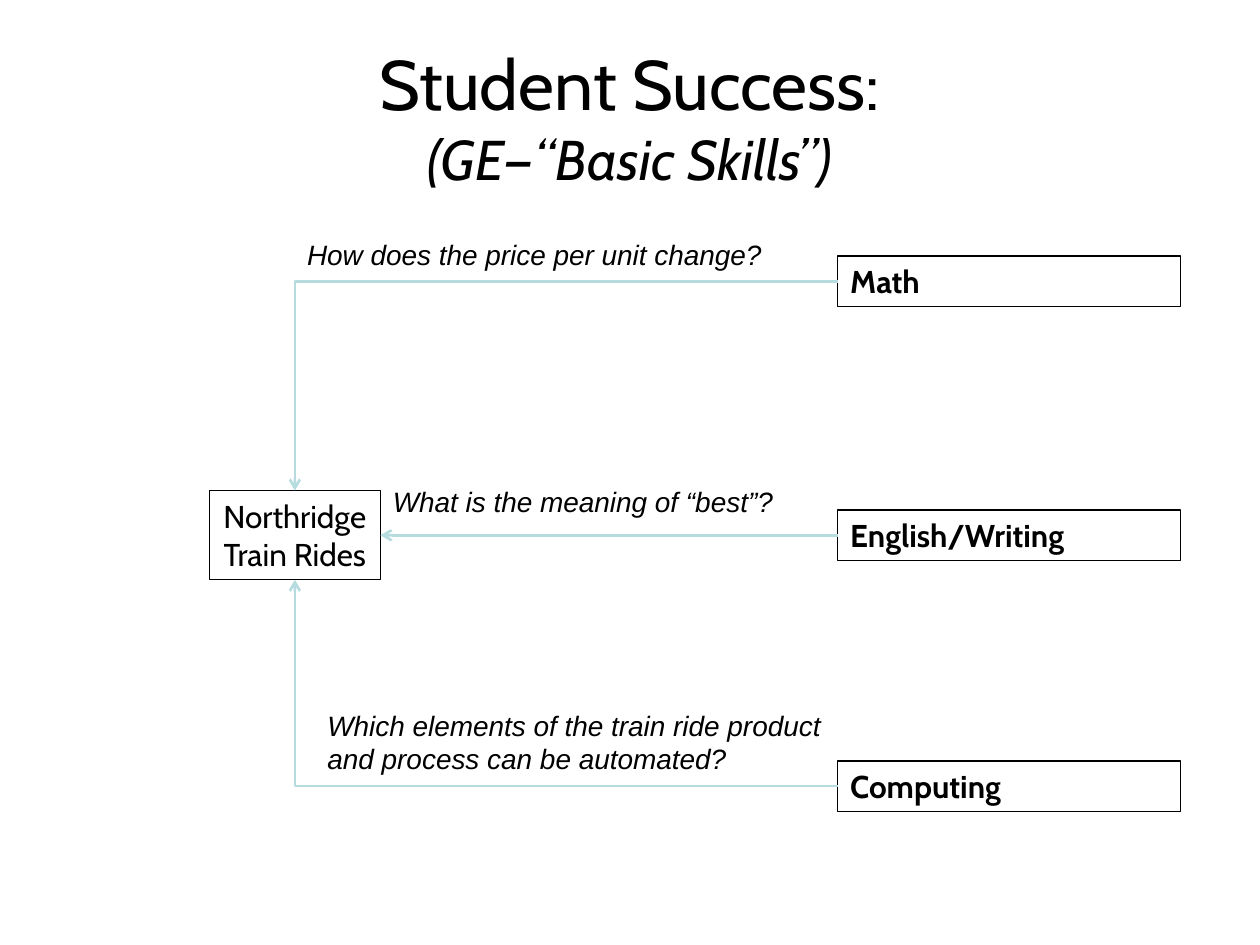
from lxml import etree
from pptx import Presentation
from pptx import util as u
from pptx.dml.color import RGBColor
from pptx.enum import shapes, text
from pptx.oxml import ns

BLACK = RGBColor(0x00, 0x00, 0x00)
WHITE = RGBColor(0xFF, 0xFF, 0xFF)
PALE_TEAL = RGBColor(0xB6, 0xDC, 0xDF)
TOP, LEFT, BOTTOM, RIGHT = range(4)  # connection sites of a rectangle

SUBJECT_LEFT, SUBJECT_WIDTH, SUBJECT_HEIGHT = 16.89, 6.91, 1.02


class SkillsSlide:
    heading_font = "Cabin"
    question_font = "Arial"

    def __init__(self, presentation):
        self.slide = presentation.slides.add_slide(presentation.slide_layouts[5])
        self.slide.background.fill.solid()
        self.slide.background.fill.fore_color.rgb = WHITE

    def add_run(self, paragraph, words, font, size, bold=False, italic=False):
        run = paragraph.add_run()
        run.text = words
        run.font.name = font
        run.font.size = u.Pt(size)
        run.font.bold = bold
        run.font.italic = italic
        run.font.color.rgb = BLACK

    def title(self, heading, subheading):
        shape = self.slide.shapes.title
        shape.left, shape.top = u.Cm(1.27), u.Cm(0.76)
        shape.width, shape.height = u.Cm(22.86), u.Cm(3.18)
        frame = shape.text_frame
        frame.auto_size = text.MSO_AUTO_SIZE.NONE
        frame.vertical_anchor = text.MSO_ANCHOR.MIDDLE
        paragraph = frame.paragraphs[0]
        paragraph.alignment = text.PP_ALIGN.CENTER
        self.add_run(paragraph, heading, self.heading_font, 40)
        paragraph.add_line_break()
        self.add_run(paragraph, subheading, self.heading_font, 32, italic=True)

    def box(self, lines, left, top, width, height, centred=False, bold=False):
        shape = self.slide.shapes.add_shape(
            shapes.MSO_SHAPE.RECTANGLE,
            u.Cm(left), u.Cm(top), u.Cm(width), u.Cm(height))
        shape.shadow.inherit = False
        shape.fill.background()
        shape.line.color.rgb = BLACK
        shape.line.width = u.Pt(0.75)
        frame = shape.text_frame
        frame.word_wrap = not centred
        frame.vertical_anchor = text.MSO_ANCHOR.MIDDLE if centred else text.MSO_ANCHOR.TOP
        for index, line in enumerate(lines):
            paragraph = frame.add_paragraph() if index else frame.paragraphs[0]
            paragraph.alignment = text.PP_ALIGN.CENTER if centred else text.PP_ALIGN.LEFT
            self.add_run(paragraph, line, self.heading_font, 18, bold=bold)
        return shape

    def question(self, words, left, top, width, height):
        shape = self.slide.shapes.add_textbox(
            u.Cm(left), u.Cm(top), u.Cm(width), u.Cm(height))
        shape.text_frame.word_wrap = True
        self.add_run(shape.text_frame.paragraphs[0], words,
                     self.question_font, 16, italic=True)

    def arrow(self, source, target, site):
        """Join the left of source to a site of target, with one corner unless level."""
        straight = site == RIGHT
        kind = shapes.MSO_CONNECTOR.STRAIGHT if straight else shapes.MSO_CONNECTOR.ELBOW
        connector = self.slide.shapes.add_connector(kind, 0, 0, 0, 0)
        connector.begin_connect(source, LEFT)
        connector.end_connect(target, site)
        connector.line.color.rgb = PALE_TEAL
        connector.line.width = u.Pt(1.5)
        properties = connector._element.spPr
        if not straight:
            properties.find(ns.qn("a:prstGeom")).set("prst", "bentConnector2")
        etree.SubElement(properties.find(ns.qn("a:ln")), ns.qn("a:tailEnd"), type="arrow")
        etree.SubElement(properties, ns.qn("a:effectLst"))


def main():
    presentation = Presentation()
    presentation.slide_width, presentation.slide_height = u.Cm(25.4), u.Cm(19.05)
    skills = SkillsSlide(presentation)
    skills.title("Student Success:", "(GE—“Basic Skills”)")
    project = skills.box(["Northridge", "Train Rides"], 4.22, 9.89, 3.45, 1.8, centred=True)

    # subject, top of its box, site on the project, question, place of the question
    subjects = [
        ("Math", 5.16, TOP, "How does the price per unit change?",
         (5.94, 4.67, 10.95, 0.94)),
        ("English/Writing", 10.28, RIGHT, "What is the meaning of “best”?",
         (7.67, 9.65, 10.95, 0.94)),
        ("Computing", 15.34, BOTTOM,
         "Which elements of the train ride product and process can be automated?",
         (6.35, 14.15, 10.54, 1.63)),
    ]
    for name, top, site, question, place in subjects:
        subject = skills.box([name], SUBJECT_LEFT, top, SUBJECT_WIDTH, SUBJECT_HEIGHT, bold=True)
        skills.arrow(subject, project, site)
        skills.question(question, *place)

    presentation.save("out.pptx")


if __name__ == "__main__":
    main()
